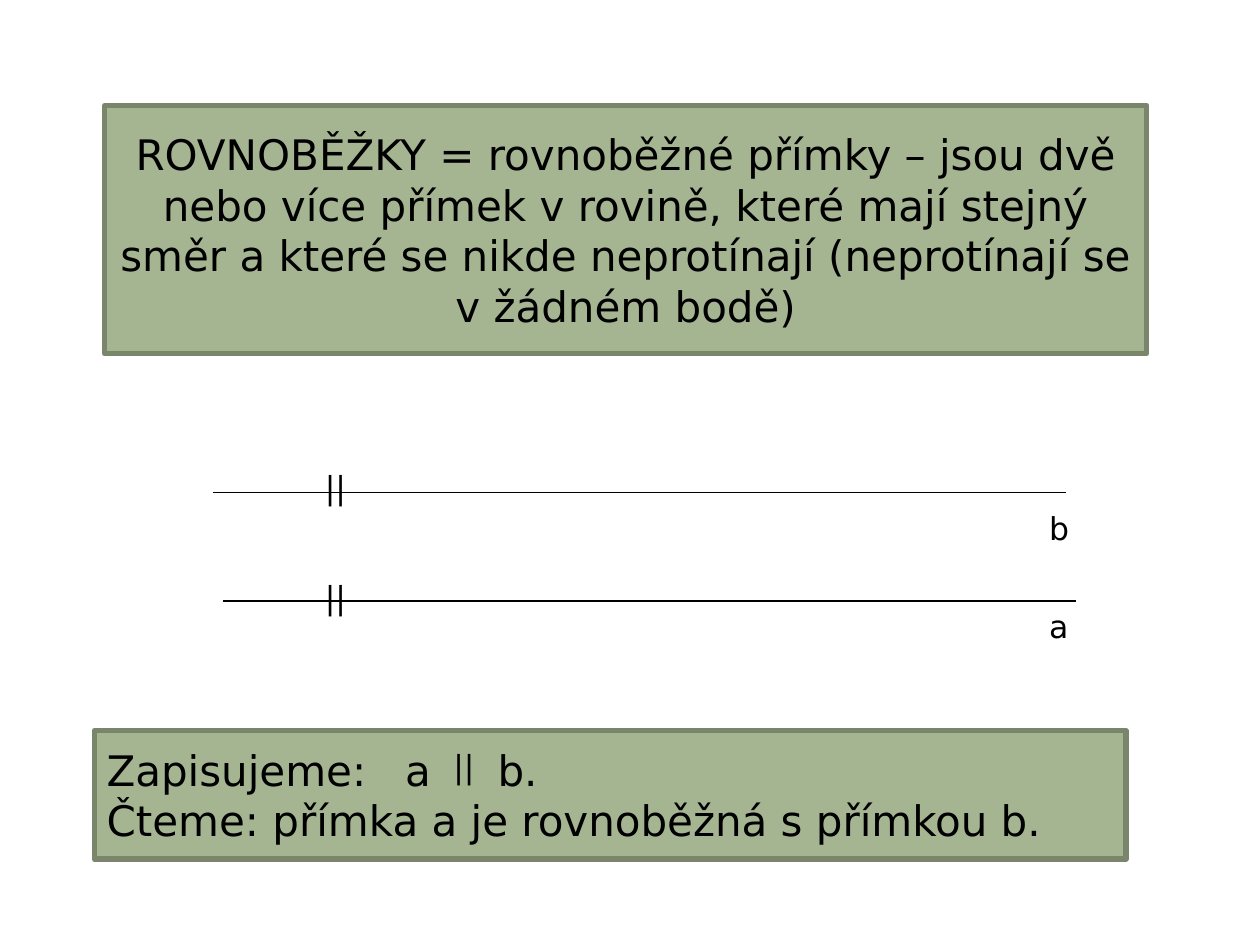
from dataclasses import dataclass
from typing import NamedTuple

from lxml.etree import SubElement
from pptx import Presentation
from pptx.dml.color import RGBColor
from pptx.enum.shapes import MSO_CONNECTOR, MSO_SHAPE
from pptx.enum.text import MSO_ANCHOR, MSO_AUTO_SIZE, PP_ALIGN
from pptx.oxml.ns import qn
from pptx.util import Cm, Pt


@dataclass(frozen=True)
class Theme:
    font: str = "DejaVu Sans"
    panel: RGBColor = RGBColor(0xA5, 0xB5, 0x92)
    border: RGBColor = RGBColor(0x7A, 0x86, 0x6C)
    ink: RGBColor = RGBColor(0, 0, 0)
    body: int = 24
    label: int = 18
    border_width: int = 3
    line_width: int = 1


class Panel(NamedTuple):
    left: float
    top: float
    width: float
    height: float
    lines: tuple[str, ...]
    align: PP_ALIGN = PP_ALIGN.LEFT
    tabs: tuple[float, ...] = ()


class Line(NamedTuple):
    left: float
    y: float


class Label(NamedTuple):
    text: str
    left: float
    top: float
    width: float


THEME = Theme()
LINE_LENGTH = 17.2
LABEL_HEIGHT = 1.02
MARK, MARK_LEFT, MARK_WIDTH = "||", 6.3, 1.19

PANELS = (
    Panel(2.11, 2.13, 21.01, 5.0,
          ("ROVNOBĚŽKY = rovnoběžné přímky – jsou dvě nebo více přímek v rovině, "
           "které mají stejný směr a které se nikde neprotínají "
           "(neprotínají se v žádném bodě)",),
          align=PP_ALIGN.CENTER),
    Panel(1.9, 14.73, 20.8, 2.59,
          ("Zapisujeme:\ta\tb.", "Čteme: přímka a je rovnoběžná s přímkou b."),
          tabs=(6.02, 7.88)),
)
LINES = (Line(4.29, 9.93), Line(4.5, 12.12))
LABELS = (
    Label("b", 20.9, 10.13, 0.99),
    Label("a", 20.9, 12.12, 0.79),
    Label(MARK, MARK_LEFT, 9.32, MARK_WIDTH),
    Label(MARK, MARK_LEFT, 11.53, MARK_WIDTH),
    Label(MARK, 8.89, 14.94, MARK_WIDTH),
)


def write(p, text: str, *, size: int, align: PP_ALIGN = PP_ALIGN.LEFT,
          tabs: tuple[float, ...] = ()) -> None:
    p.alignment = align
    if tabs:
        tab_list = SubElement(p._p.get_or_add_pPr(), qn("a:tabLst"))
        for pos in tabs:
            SubElement(tab_list, qn("a:tab"), pos=str(Cm(pos)), algn="l")
    r = p.add_run()
    r.text = text
    r.font.name = THEME.font
    r.font.size = Pt(size)
    r.font.color.rgb = THEME.ink


def draw_panel(s, panel: Panel) -> None:
    sp = s.shapes.add_shape(MSO_SHAPE.RECTANGLE, Cm(panel.left), Cm(panel.top),
                            Cm(panel.width), Cm(panel.height))
    sp.shadow.inherit = False
    sp.fill.solid()
    sp.fill.fore_color.rgb = THEME.panel
    sp.line.color.rgb = THEME.border
    sp.line.width = Pt(THEME.border_width)
    tf = sp.text_frame
    tf.word_wrap = True
    tf.vertical_anchor = MSO_ANCHOR.MIDDLE
    for i, text in enumerate(panel.lines):
        p = tf.add_paragraph() if i else tf.paragraphs[0]
        write(p, text, size=THEME.body, align=panel.align,
              tabs=panel.tabs if "\t" in text else ())


def draw_line(s, line: Line) -> None:
    cxn = s.shapes.add_connector(MSO_CONNECTOR.STRAIGHT, Cm(line.left), Cm(line.y),
                                 Cm(line.left + LINE_LENGTH), Cm(line.y))
    cxn.line.color.rgb = THEME.ink
    cxn.line.width = Pt(THEME.line_width)
    SubElement(cxn._element.spPr, qn("a:effectLst"))


def draw_label(s, label: Label) -> None:
    tb = s.shapes.add_textbox(Cm(label.left), Cm(label.top),
                              Cm(label.width), Cm(LABEL_HEIGHT))
    tf = tb.text_frame
    tf.word_wrap = True
    tf.auto_size = MSO_AUTO_SIZE.SHAPE_TO_FIT_TEXT
    write(tf.paragraphs[0], label.text, size=THEME.label)


def main() -> None:
    prs = Presentation()
    prs.slide_width, prs.slide_height = Cm(25.4), Cm(19.05)
    s = prs.slides.add_slide(prs.slide_layouts[6])
    for panel in PANELS:
        draw_panel(s, panel)
    for line in LINES:
        draw_line(s, line)
    for label in LABELS:
        draw_label(s, label)
    prs.save("out.pptx")


if __name__ == "__main__":
    main()
